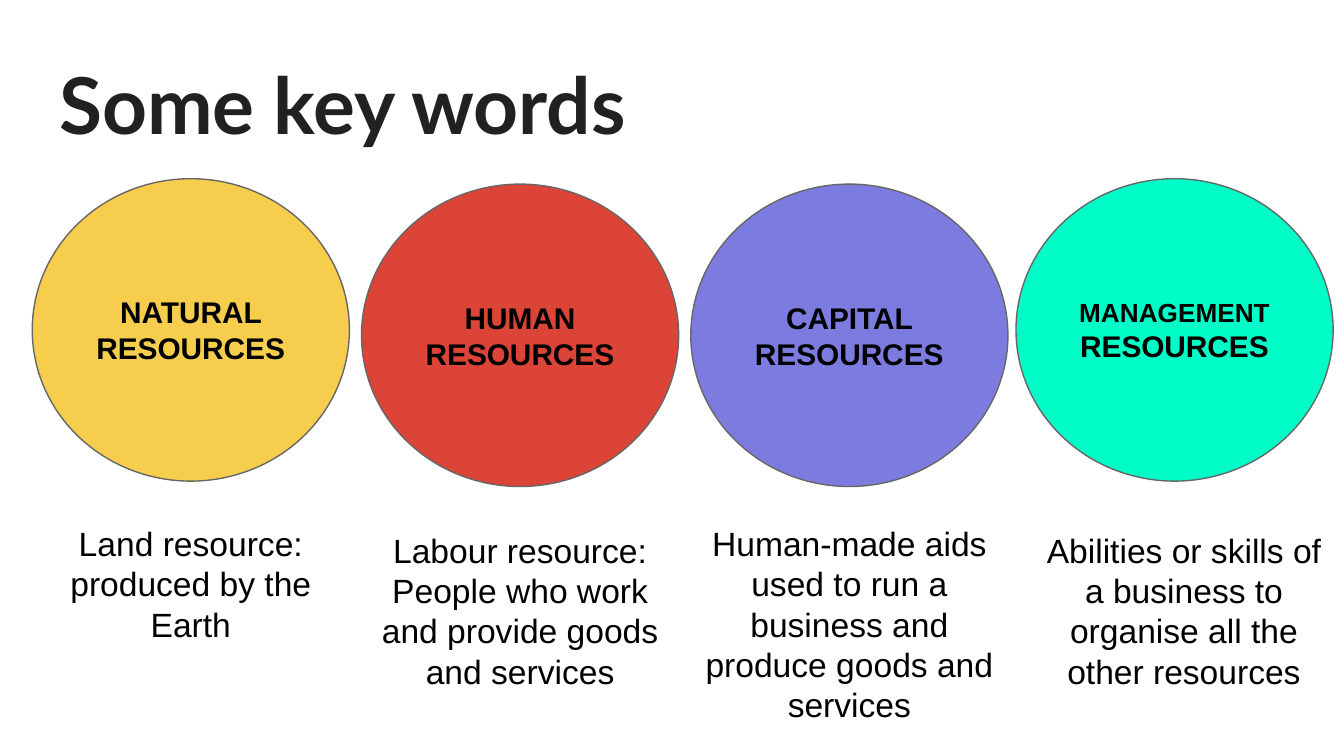
from pptx import Presentation
from pptx.dml.color import RGBColor
from pptx.enum.shapes import MSO_SHAPE as Shape
from pptx.enum.text import MSO_ANCHOR as Anchor, MSO_AUTO_SIZE as Fit, PP_ALIGN as Align
from pptx.util import Inches, Pt

BLACK = RGBColor(0x00, 0x00, 0x00)
INK = RGBColor(0x21, 0x21, 0x21)
GREY = RGBColor(0x66, 0x66, 0x66)
GOLD = RGBColor(0xF6, 0xCD, 0x4C)
RED = RGBColor(0xDB, 0x44, 0x37)
VIOLET = RGBColor(0x7C, 0x7C, 0xE0)
MINT = RGBColor(0x00, 0xFD, 0xC8)

WIDTH = 2.36
HIGH, LOW = 1.33, 1.37
UPPER, LOWER = 3.79, 3.84

ITEMS = [
    (GOLD, 0.24, HIGH, [("NATURAL RESOURCES", 16)],
     0.24, UPPER, ["Land resource: produced by the Earth"]),
    (RED, 2.69, LOW, [("HUMAN RESOURCES", 16)],
     2.69, LOWER, ["Labour resource:", "People who work and provide goods and services"]),
    (VIOLET, 5.14, LOW, [("CAPITAL RESOURCES", 16)],
     5.14, UPPER, ["Human-made aids used to run a business and produce goods and services"]),
    (MINT, 7.56, HIGH, [("MANAGEMENT ", 14), ("RESOURCES", 16)],
     7.63, LOWER, ["Abilities or skills of a business to organise all the other resources"]),
]


def set_frame(frame, anchor):
    frame.word_wrap = True
    frame.auto_size = Fit.NONE
    frame.vertical_anchor = anchor
    frame.margin_left = frame.margin_right = Inches(0.1)
    frame.margin_top = frame.margin_bottom = Inches(0.1)


def add_run(para, text, size, bold=False, face="Arial", color=BLACK):
    run = para.add_run()
    run.text = text
    font = run.font
    font.name = face
    font.size = Pt(size)
    font.bold = bold
    font.color.rgb = color


def fill_text(frame, paras, bold=False):
    for i, runs in enumerate(paras):
        para = frame.add_paragraph() if i else frame.paragraphs[0]
        para.alignment = Align.CENTER
        para.line_spacing = 1.0
        for text, size in runs:
            add_run(para, text, size, bold)


def set_title(slide, text):
    title = slide.shapes.title
    title.left, title.top = Inches(0.34), Inches(0.32)
    title.width, title.height = Inches(9.32), Inches(0.88)
    set_frame(title.text_frame, Anchor.TOP)
    para = title.text_frame.paragraphs[0]
    para.alignment = Align.LEFT
    para.line_spacing = 1.0
    add_run(para, text, 42, True, "Lato", INK)


def add_circle(slide, left, top, color, runs):
    circle = slide.shapes.add_shape(
        Shape.OVAL, Inches(left), Inches(top), Inches(WIDTH), Inches(2.25))
    circle.shadow.inherit = False
    circle.fill.solid()
    circle.fill.fore_color.rgb = color
    circle.line.color.rgb = GREY
    circle.line.width = Pt(0.75)
    set_frame(circle.text_frame, Anchor.MIDDLE)
    fill_text(circle.text_frame, [runs], True)


def add_note(slide, left, top, lines):
    box = slide.shapes.add_textbox(
        Inches(left), Inches(top), Inches(WIDTH), Inches(1.52))
    set_frame(box.text_frame, Anchor.TOP)
    fill_text(box.text_frame, [[(line, 18)] for line in lines])


def main():
    deck = Presentation()
    deck.slide_width = Inches(10)
    deck.slide_height = Inches(10) * 9 // 16
    slide = deck.slides.add_slide(deck.slide_layouts[5])
    set_title(slide, "Some key words")
    for color, left, top, label, note_left, note_top, lines in ITEMS:
        add_circle(slide, left, top, color, label)
        add_note(slide, note_left, note_top, lines)
    deck.save("out.pptx")


if __name__ == "__main__":
    main()
